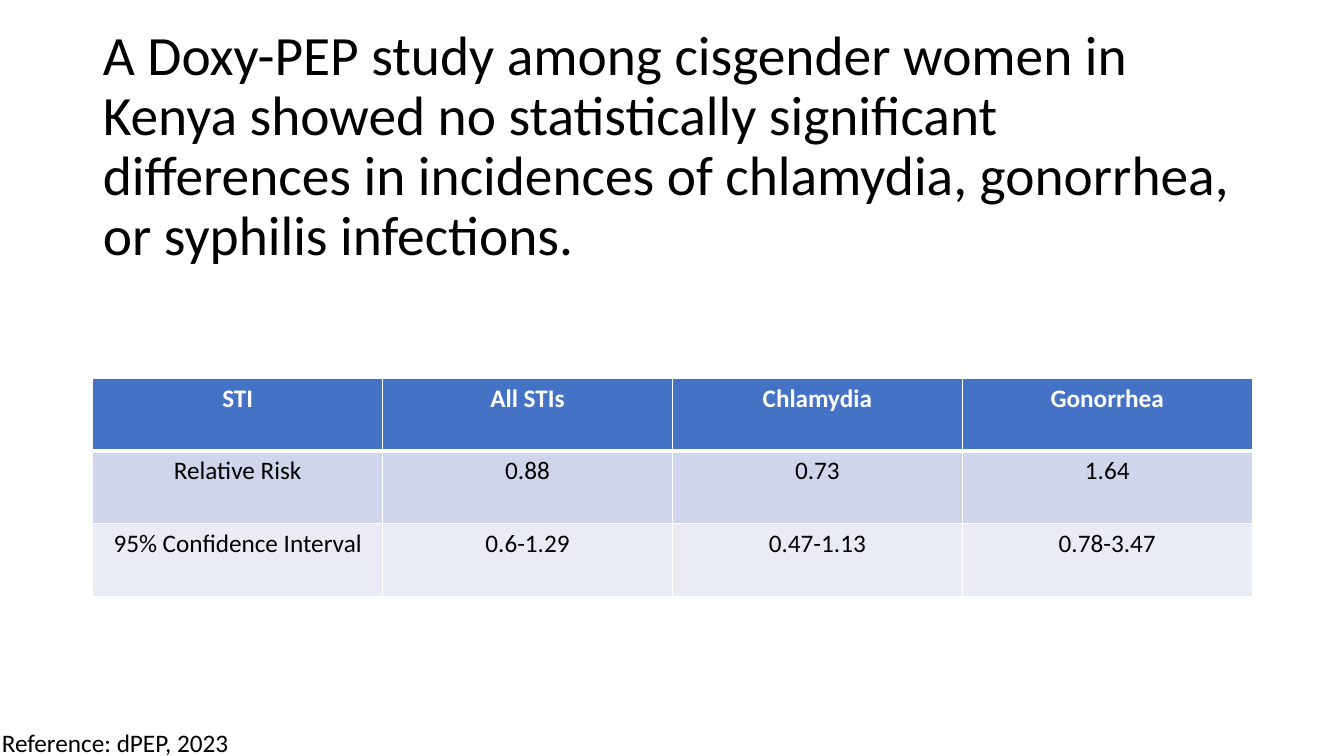
from lxml import etree
from pptx import Presentation
from pptx.dml.color import RGBColor
from pptx.enum import text
from pptx.oxml import ns
from pptx.util import Inches, Pt

BLACK = RGBColor(0x00, 0x00, 0x00)
WHITE = RGBColor(0xFF, 0xFF, 0xFF)
HEADER_BLUE = RGBColor(0x44, 0x72, 0xC4)
BAND_DARK = RGBColor(0xCF, 0xD5, 0xEA)
BAND_LIGHT = RGBColor(0xE9, 0xEB, 0xF5)

TITLE = (
    "A Doxy-PEP study among cisgender women in Kenya showed no statistically "
    "significant differences in incidences of chlamydia, gonorrhea, or syphilis infections."
)
RESULTS = [
    ["STI", "All STIs", "Chlamydia", "Gonorrhea"],
    ["Relative Risk", "0.88", "0.73", "1.64"],
    ["95% Confidence Interval", "0.6-1.29", "0.47-1.13", "0.78-3.47"],
]
ROW_FILLS = [HEADER_BLUE, BAND_DARK, BAND_LIGHT]


def write(tf, words, size=18, color=BLACK, bold=False, align=text.PP_ALIGN.LEFT, spacing=None):
    """Put formatted words in the first paragraph of a text frame."""
    p = tf.paragraphs[0]
    p.alignment = align
    p.line_spacing = spacing
    r = p.add_run()
    r.text = words
    r.font.name = "Calibri"
    r.font.size = Pt(size)
    r.font.bold = bold
    r.font.color.rgb = color


def add_borders(cell, top, bottom):
    """Draw white borders on a cell, with top and bottom widths in points."""
    tc_pr = cell._tc.get_or_add_tcPr()
    for side, width in (("L", 1), ("R", 1), ("T", top), ("B", bottom)):
        ln = etree.SubElement(tc_pr, ns.qn(f"a:ln{side}"), w=str(Pt(width)))
        fill = etree.SubElement(ln, ns.qn("a:solidFill"))
        etree.SubElement(fill, ns.qn("a:srgbClr"), val=str(WHITE))


def add_title(s, left, top, width, height):
    """Place the slide title in the given box."""
    sp = s.shapes.title
    sp.left, sp.top, sp.width, sp.height = map(Inches, (left, top, width, height))
    tf = sp.text_frame
    tf.word_wrap = True
    tf.auto_size = text.MSO_AUTO_SIZE.NONE
    tf.vertical_anchor = text.MSO_ANCHOR.MIDDLE
    write(tf, TITLE, size=39.6, spacing=0.9)


def add_results(s, left, top, width, height):
    """Fill the given box with the table of results."""
    box = map(Inches, (left, top, width, height))
    table = s.shapes.add_table(len(RESULTS), len(RESULTS[0]), *box).table
    for i, (row, fill) in enumerate(zip(RESULTS, ROW_FILLS)):
        header = i == 0
        for j, words in enumerate(row):
            cell = table.cell(i, j)
            add_borders(cell, top=3 if i == 1 else 1, bottom=3 if header else 1)
            cell.fill.solid()
            cell.fill.fore_color.rgb = fill
            write(cell.text_frame, words, color=WHITE if header else BLACK,
                  bold=header, align=text.PP_ALIGN.CENTER)


def add_reference(s, left, top, width, height):
    """Place the reference line in the given box."""
    sp = s.shapes.add_textbox(*map(Inches, (left, top, width, height)))
    sp.text_frame.word_wrap = False
    sp.text_frame.auto_size = text.MSO_AUTO_SIZE.SHAPE_TO_FIT_TEXT
    write(sp.text_frame, "Reference: dPEP, 2023")


def main():
    """Build the slide and save it."""
    prs = Presentation()
    prs.slide_width, prs.slide_height = Inches(13.33), Inches(7.5)
    s = prs.slides.add_slide(prs.slide_layouts[5])
    add_title(s, 0.92, 0.74, 11.5, 1.45)
    add_results(s, 0.92, 3.75, 11.5, 2.17)
    add_reference(s, -0.08, 7.17, 2.48, 0.4)
    prs.save("out.pptx")


if __name__ == "__main__":
    main()
